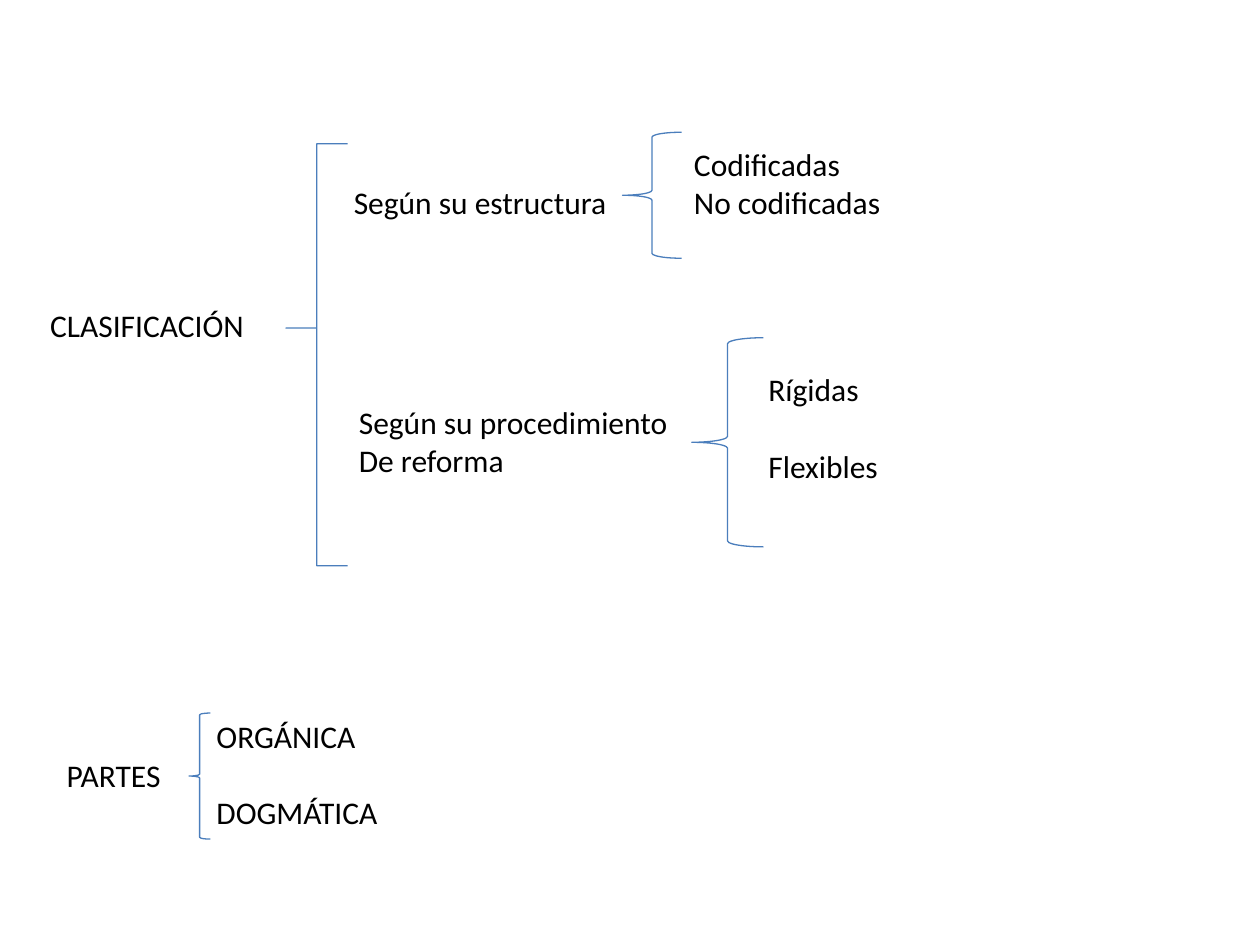
from pptx import Presentation
from pptx.dml.color import RGBColor
from pptx.enum.shapes import MSO_SHAPE
from pptx.util import Pt

COLORS = {"text": "000000", "brace": "4B7EBC"}
FONT = "Calibri"
FONT_SIZE = 18
LINE_HEIGHT = 22

# left, top, width, height, lines, gap between lines
LABELS = [
    (21.6, 171.4, 141.8, 72.7, ["CLASIFICACIÓN"], 0),
    (195.1, 100.8, 160.6, 29, ["Según su estructura"], 0),
    (389.5, 79.2, 122.4, 51, ["Codificadas", "No codificadas"], 0),
    (198, 226.8, 197.3, 51, ["Según su procedimiento", "De reforma"], 0),
    (432, 208.1, 77.8, 72.7, ["Rígidas", "Flexibles"], LINE_HEIGHT),
    (31, 428.4, 77, 29, ["PARTES"], 0),
    (116.6, 406.1, 107.3, 72.7, ["ORGÁNICA", "DOGMÁTICA"], LINE_HEIGHT),
]

# left, top, width, height, adjustments (curvature, tip position)
BRACES = [
    (163.4, 82.1, 35.3, 241.2, (0, 0.437)),
    (355.7, 75.6, 33.8, 72, ()),
    (395.3, 193, 41, 119.5, ()),
    (108, 407.5, 12.2, 72, ()),
]


def add_label(s, left, top, width, height, lines, gap):
    tf = s.shapes.add_textbox(Pt(left), Pt(top), Pt(width), Pt(height)).text_frame
    tf.word_wrap = len(lines) == 1 and height > 2 * LINE_HEIGHT
    for i, line in enumerate(lines):
        p = tf.add_paragraph() if i else tf.paragraphs[0]
        p.text = line
        p.space_before = Pt(gap if i else 0)
        p.font.name = FONT
        p.font.size = Pt(FONT_SIZE)
        p.font.color.rgb = RGBColor.from_string(COLORS["text"])


def add_brace(s, left, top, width, height, adjustments):
    sp = s.shapes.add_shape(
        MSO_SHAPE.LEFT_BRACE, Pt(left), Pt(top), Pt(width), Pt(height)
    )
    for i, value in enumerate(adjustments):
        sp.adjustments[i] = value
    sp.shadow.inherit = False
    sp.fill.background()
    sp.line.color.rgb = RGBColor.from_string(COLORS["brace"])
    sp.line.width = Pt(0.75)


def main():
    prs = Presentation()
    prs.slide_width, prs.slide_height = Pt(720), Pt(540)
    s = prs.slides.add_slide(prs.slide_layouts[6])
    for brace in BRACES:
        add_brace(s, *brace)
    for label in LABELS:
        add_label(s, *label)
    prs.save("out.pptx")


if __name__ == "__main__":
    main()
